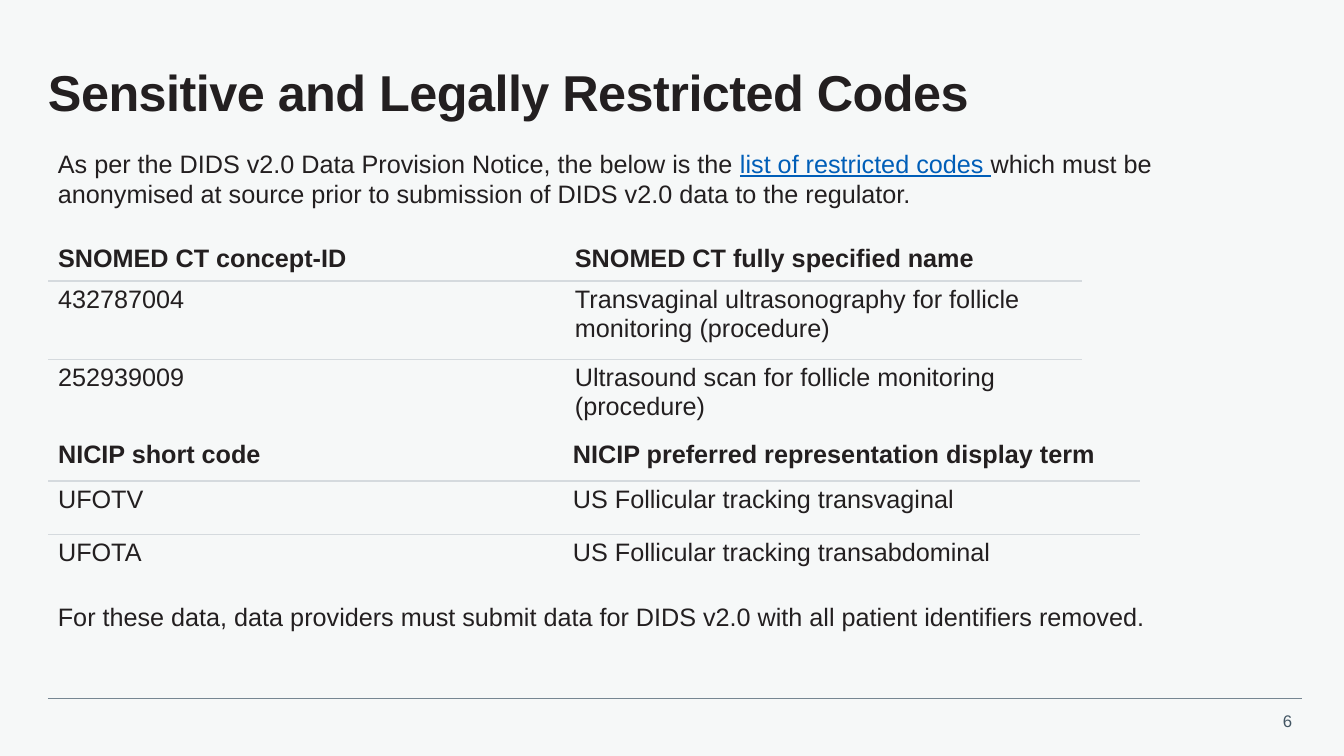
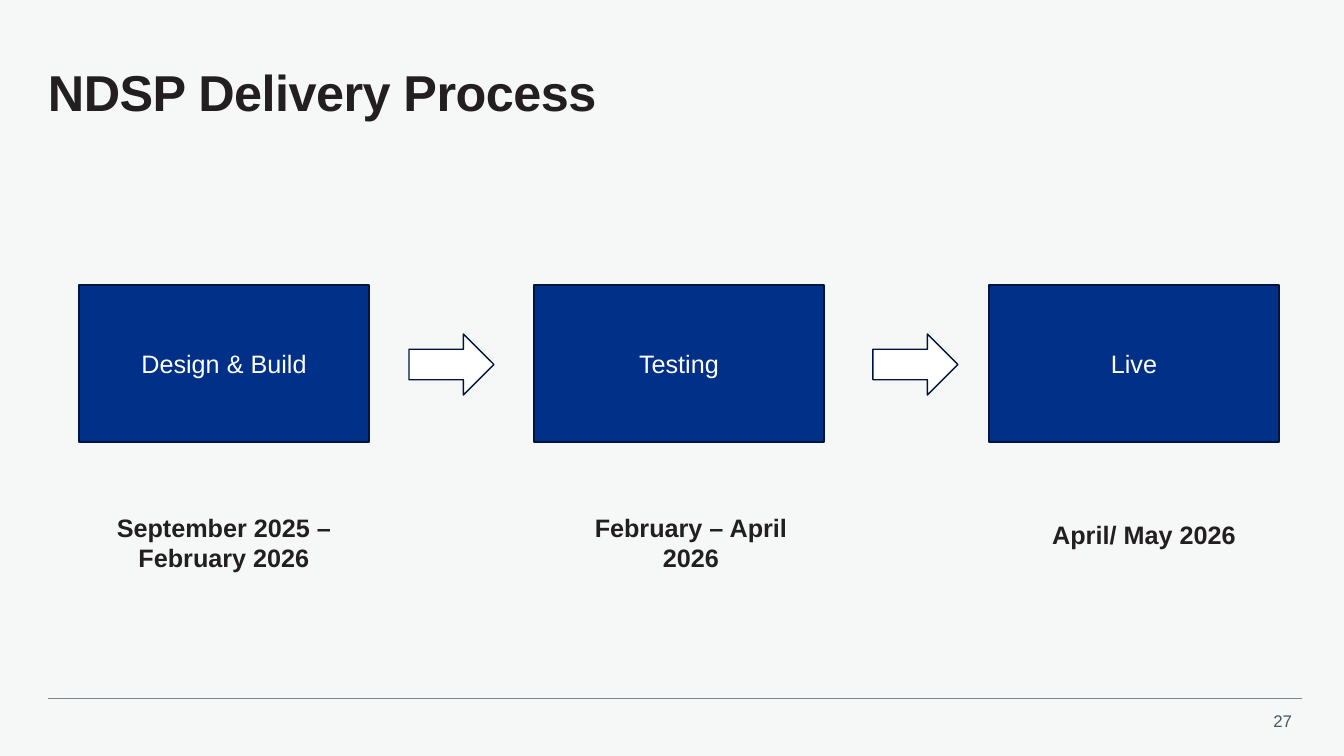
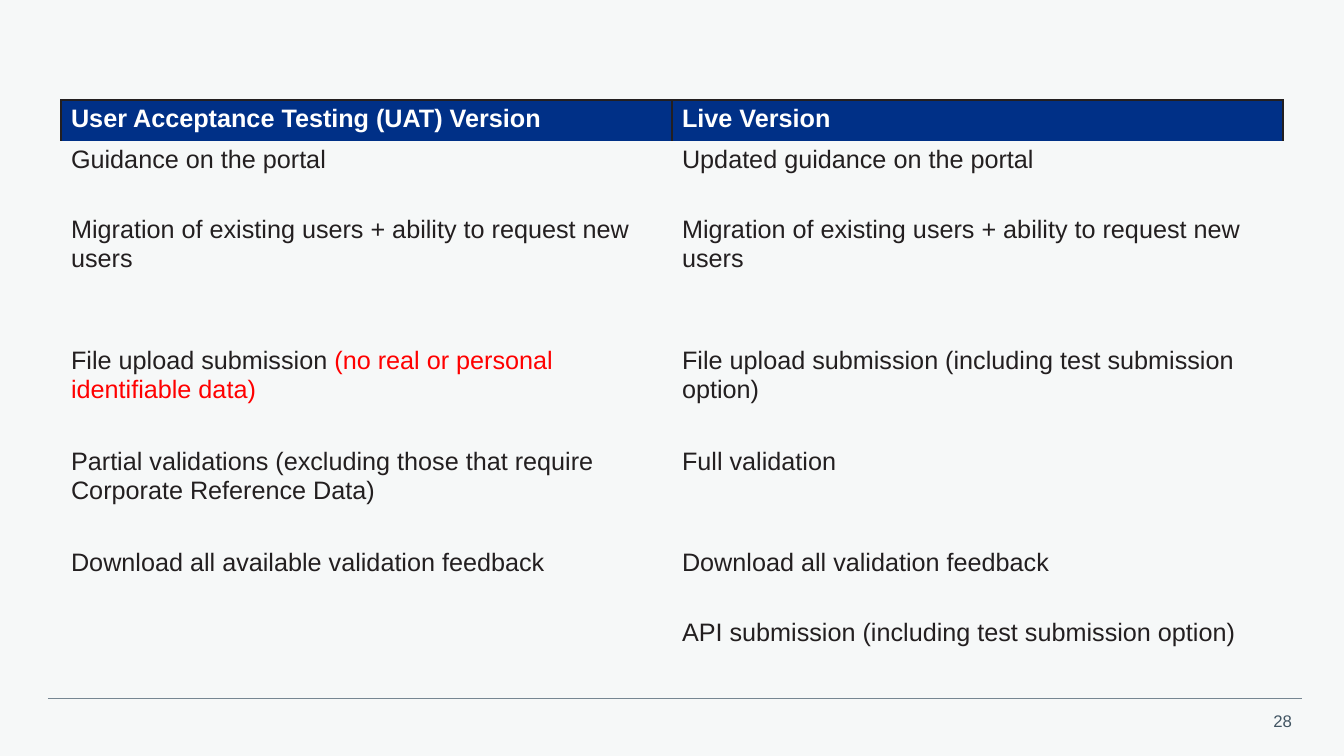
"""Builds three slides on restricted codes, the delivery process and the portal versions."""
from collections import namedtuple

from lxml.etree import SubElement
from pptx import Presentation
from pptx.dml.color import RGBColor
from pptx.enum.shapes import MSO_CONNECTOR, MSO_SHAPE
from pptx.enum.text import MSO_ANCHOR, PP_ALIGN
from pptx.oxml.ns import qn
from pptx.util import Emu, Pt

EMU_PER_PX = 914400 / 100.8
PAPER = RGBColor(0xF6, 0xF8, 0xF8)
INK = RGBColor(0x23, 0x1F, 0x20)
WHITE = RGBColor(0xFF, 0xFF, 0xFF)
NAVY = RGBColor(0x00, 0x30, 0x87)
OUTLINE = RGBColor(0x00, 0x15, 0x3B)
LINK = RGBColor(0x00, 0x5E, 0xB8)
WARNING = RGBColor(0xFF, 0x00, 0x00)
RULE = RGBColor(0x76, 0x86, 0x92)
GRID = RGBColor(0xD5, 0xDA, 0xDE)
PAGE_NUMBER = RGBColor(0x42, 0x55, 0x63)

FONT = "Arial"
PLAIN_TABLE_STYLE = "{2D5ABB26-0587-4C30-8999-92F81FD0307C}"
BODY = {"name": FONT, "size": Pt(18), "bold": False}
STRONG = {**BODY, "bold": True}
TITLE = {**STRONG, "size": Pt(36)}
SMALL = {**BODY, "size": Pt(12)}

Box = namedtuple("Box", "left top width height")


def px(length):
    """Turn pixels into EMU."""
    return Emu(round(length * EMU_PER_PX))


def place(box):
    """Give a box as four EMU lengths."""
    return [px(length) for length in box]


def write(paragraph, content, style=BODY, color=INK, align=PP_ALIGN.LEFT):
    """Fill a paragraph from a string or from (text, extra format, colour) parts."""
    paragraph.alignment = align
    parts = [(content, {}, color)] if isinstance(content, str) else content
    for text, extra, part_color in parts:
        run = paragraph.add_run()
        run.text = text
        for name, value in {**style, **extra}.items():
            setattr(run.font, name, value)
        run.font.color.rgb = part_color


def add_text(slide, box, content, **options):
    """Add a wrapping text box with one paragraph and return its frame."""
    frame = slide.shapes.add_textbox(*place(box)).text_frame
    frame.word_wrap = True
    write(frame.paragraphs[0], content, **options)
    return frame


def add_title(slide, box, text):
    """Add the slide title."""
    frame = add_text(slide, box, text, style=TITLE)
    settings = {"vertical_anchor": MSO_ANCHOR.MIDDLE, "margin_left": 0,
                "margin_right": 0, "margin_top": 0, "margin_bottom": 0}
    for name, value in settings.items():
        setattr(frame, name, value)
    paragraph = frame.paragraphs[0]
    paragraph.line_spacing = 0.9
    paragraph.runs[0].font._element.set("spc", "-40")


def add_footer(slide, box, number):
    """Add the footer rule and the page number below it."""
    right = box.left + box.width
    rule = slide.shapes.add_connector(
        MSO_CONNECTOR.STRAIGHT, px(box.left), px(box.top), px(right), px(box.top))
    rule.line.color.rgb = RULE
    rule.line.width = Pt(0.5)
    SubElement(rule._element.spPr, qn("a:effectLst"))
    add_text(slide, Box(right - 41, box.top + 8, 41, 30), str(number),
             style=SMALL, color=PAGE_NUMBER, align=PP_ALIGN.RIGHT)


def add_slide(presentation, number, title=None):
    """Add a slide with the shared background, footer and title."""
    slide = presentation.slides.add_slide(presentation.slide_layouts[6])
    slide.background.fill.solid()
    slide.background.fill.fore_color.rgb = PAPER
    add_footer(slide, Box(48, 698, 1254, 38), number)
    if title:
        add_title(slide, Box(48, 47, 1257, 96), title)
    return slide


def set_border(cell, side, color, points):
    """Draw one side of a cell, given as L, R, T or B."""
    properties = cell._tc.get_or_add_tcPr()
    line = SubElement(properties, qn(f"a:ln{side}"), w=str(Pt(points)))
    fill = SubElement(line, qn("a:solidFill"))
    SubElement(fill, qn("a:srgbClr"), val=str(color))


def add_table(slide, box, widths, heights, rows, head_color=INK):
    """Add an unstyled table with a bold first row and return it."""
    frame = slide.shapes.add_table(len(rows), len(widths), *place(box))
    table = frame.table
    table.first_row = table.horz_banding = False
    table._tbl.tblPr.find(qn("a:tableStyleId")).text = PLAIN_TABLE_STYLE
    for column, width in zip(table.columns, widths):
        column.width = px(width)
    for index, (row, height, texts) in enumerate(zip(table.rows, heights, rows)):
        row.height = px(height)
        style, color = (BODY, INK) if index else (STRONG, head_color)
        for cell, text in zip(row.cells, texts):
            write(cell.text_frame.paragraphs[0], text, style, color)
    return table


def add_code_table(slide, box, widths, heights, rows, name_margin=10):
    """Add a code list with hairlines between its rows."""
    table = add_table(slide, box, widths, heights, rows)
    for row, points in zip(table.rows, (1, 0.33, 0)):
        row.cells[1].margin_left = px(name_margin)
        for cell in row.cells:
            if points:
                set_border(cell, "B", GRID, points)
            cell.fill.background()
    for cell in table.rows[0].cells:
        cell.vertical_anchor = MSO_ANCHOR.MIDDLE


def add_version_table(slide, box, heights, rows):
    """Add the comparison table with a navy header row."""
    table = add_table(slide, box, [box.width / 2] * 2, heights, rows, WHITE)
    for index, row in enumerate(table.rows):
        for cell in row.cells:
            if index:
                cell.fill.background()
                continue
            for side in "LRT":
                set_border(cell, side, INK, 1)
            cell.fill.solid()
            cell.fill.fore_color.rgb = NAVY


def add_block(slide, kind, box, fill):
    """Add an outlined preset shape."""
    shape = slide.shapes.add_shape(kind, *place(box))
    shape.shadow.inherit = False
    shape.fill.solid()
    shape.fill.fore_color.rgb = fill
    shape.line.color.rgb = OUTLINE
    shape.line.width = Pt(1)
    return shape


def add_stage(slide, box, name, dates, date_offset, arrow_offset):
    """Add one stage with its dates below and, if any, the arrow to the next."""
    shape = add_block(slide, MSO_SHAPE.RECTANGLE, box, NAVY)
    shape.text_frame.vertical_anchor = MSO_ANCHOR.MIDDLE
    write(shape.text_frame.paragraphs[0], name, color=WHITE, align=PP_ALIGN.CENTER)
    across, down = date_offset
    add_text(slide, Box(box.left + across, box.top + down, 252, 72), dates,
             style=STRONG, align=PP_ALIGN.CENTER)
    if arrow_offset:
        arrow = Box(box.left + arrow_offset, box.top + 49, 85, 61)
        add_block(slide, MSO_SHAPE.RIGHT_ARROW, arrow, WHITE)


def build_codes_slide(presentation):
    """Build the slide of restricted codes."""
    slide = add_slide(presentation, 6, "Sensitive and Legally Restricted Codes")
    frame = add_text(slide, Box(48, 143, 1223, 529), [
        ("As per the DIDS v2.0 Data Provision Notice, the below is the ", {}, INK),
        ("list of restricted codes ", {"underline": True}, LINK),
        ("which must be anonymised at source prior to submission of DIDS v2.0 data "
         "to the regulator.", {}, INK)])
    closing = frame.add_paragraph()
    closing.space_before = px(393)
    write(closing, "For these data, data providers must submit data for DIDS v2.0 "
                   "with all patient identifiers removed.")
    add_code_table(slide, Box(48, 237, 1034, 334), (517, 517), (44, 78, 212), [
        ("SNOMED CT concept-ID", "SNOMED CT fully specified name"),
        ("432787004", "Transvaginal ultrasonography for follicle monitoring (procedure)"),
        ("252939009", "Ultrasound scan for follicle monitoring (procedure)")])
    add_code_table(slide, Box(48, 428, 1092, 157), (299, 793), (53, 53, 51), [
        ("NICIP short code", "NICIP preferred representation display term"),
        ("UFOTV", "US Follicular tracking transvaginal"),
        ("UFOTA", "US Follicular tracking transabdominal")], name_margin=226)


def build_process_slide(presentation):
    """Build the slide of delivery stages."""
    slide = add_slide(presentation, 27, "NDSP Delivery Process")
    stages = [
        ("Design & Build", "September 2025 – February 2026", (19, 222), 330),
        ("Testing", "February – April 2026", (31, 222), 339),
        ("Live", "April/ May 2026", (29, 229), None)]
    for index, stage in enumerate(stages):
        add_stage(slide, Box(79 + 455 * index, 285, 290, 157), *stage)


def build_versions_slide(presentation):
    """Build the slide that compares the two versions."""
    slide = add_slide(presentation, 28)
    migration = "Migration of existing users + ability to request new users"
    upload = [("File upload submission ", {}, INK),
              ("(no real or personal identifiable data)", {}, WARNING)]
    add_version_table(slide, Box(61, 100, 1222, 555), (41, 70, 131, 101, 101, 70, 41), [
        ("User Acceptance Testing (UAT) Version", "Live Version"),
        ("Guidance on the portal", "Updated guidance on the portal"),
        (migration, migration),
        (upload, "File upload submission (including test submission option)"),
        ("Partial validations (excluding those that require Corporate Reference Data)",
         "Full validation"),
        ("Download all available validation feedback", "Download all validation feedback"),
        ("", "API submission (including test submission option)")])


def main():
    """Build and save the presentation."""
    presentation = Presentation()
    presentation.slide_width, presentation.slide_height = px(1344), px(756)
    for build in (build_codes_slide, build_process_slide, build_versions_slide):
        build(presentation)
    presentation.save("out.pptx")


if __name__ == "__main__":
    main()
